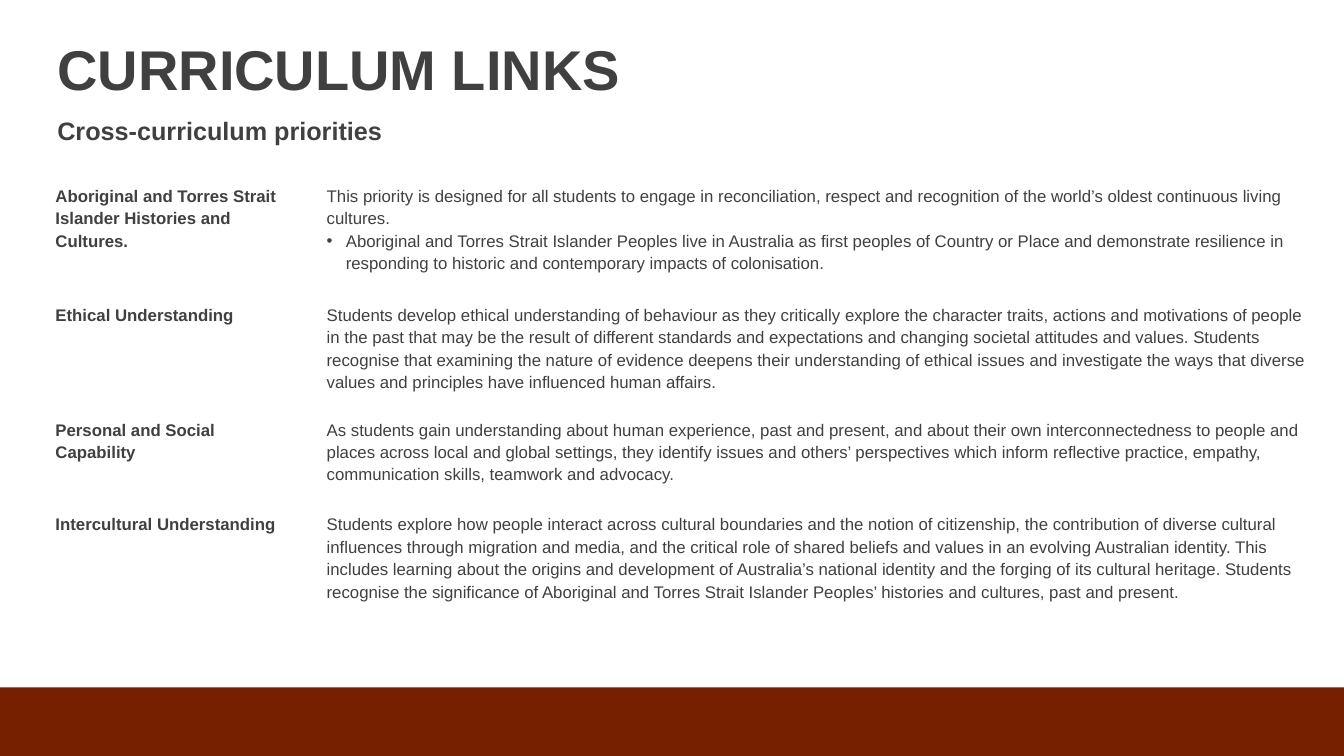
from lxml import etree
from pptx import Presentation
from pptx.dml.color import RGBColor
from pptx.enum.shapes import MSO_SHAPE
from pptx.enum.text import MSO_ANCHOR, MSO_AUTO_SIZE, PP_ALIGN
from pptx.oxml.ns import qn
from pptx.util import Inches, Pt

RECTANGLE = MSO_SHAPE.RECTANGLE
TOP, MIDDLE = MSO_ANCHOR.TOP, MSO_ANCHOR.MIDDLE
NO_AUTOFIT = MSO_AUTO_SIZE.NONE
LEFT_ALIGN = PP_ALIGN.LEFT

TITLE = "CURRICULUM LINKS"
SUBTITLE = "Cross-curriculum priorities"
# Each priority: name, description, bullet points, row height in inches
PRIORITIES = [
    ("Aboriginal and Torres Strait Islander Histories and Cultures.",
     "This priority is designed for all students to engage in reconciliation, respect and "
     "recognition of the world’s oldest continuous living cultures.",
     ["Aboriginal and Torres Strait Islander Peoples live in Australia as first peoples of "
      "Country or Place and demonstrate resilience in responding to historic and contemporary "
      "impacts of colonisation."], 1.18),
    ("Ethical Understanding",
     "Students develop ethical understanding of behaviour as they critically explore the "
     "character traits, actions and motivations of people in the past that may be the result "
     "of different standards and expectations and changing societal attitudes and values. "
     "Students recognise that examining the nature of evidence deepens their understanding of "
     "ethical issues and investigate the ways that diverse values and principles have "
     "influenced human affairs.", [], 1.14),
    ("Personal and Social Capability",
     "As students gain understanding about human experience, past and present, and about their "
     "own interconnectedness to people and places across local and global settings, they "
     "identify issues and others’ perspectives which inform reflective practice, empathy, "
     "communication skills, teamwork and advocacy.", [], 0.94),
    ("Intercultural Understanding",
     "Students explore how people interact across cultural boundaries and the notion of "
     "citizenship, the contribution of diverse cultural influences through migration and "
     "media, and the critical role of shared beliefs and values in an evolving Australian "
     "identity. This includes learning about the origins and development of Australia’s "
     "national identity and the forging of its cultural heritage. Students recognise the "
     "significance of Aboriginal and Torres Strait Islander Peoples’ histories and cultures, "
     "past and present.", [], 1.08),
]

THEME = {
    "font": "Arial",
    "text": RGBColor(0x40, 0x40, 0x40),
    "bar": RGBColor(0x76, 0x20, 0x00),
    "title": Pt(40),
    "subtitle": Pt(18),
    "body": Pt(12),
}
SLIDE_WIDTH, SLIDE_HEIGHT = 13.33, 7.5
BAR_HEIGHT = 0.68
LEFT = 0.47
TABLE_TOP = 1.74
COLUMN_WIDTHS = (2.5, 10.16)
CELL_MARGIN = 0.08
INDENT = 0.19
LINE_SPACING = 1.19
SPACE_AFTER = Pt(7.5)


def apply_format(target, values):
    for name, value in values.items():
        setattr(target, name, value)


def write_paragraph(paragraph, text, size, bold, line_spacing=LINE_SPACING, space_after=Pt(0)):
    paragraph.text = text
    apply_format(paragraph, {"alignment": LEFT_ALIGN, "line_spacing": line_spacing,
                             "space_before": Pt(0), "space_after": space_after})
    apply_format(paragraph.font, {"name": THEME["font"], "size": THEME[size], "bold": bold})
    paragraph.font.color.rgb = THEME["text"]


def indent_paragraph(paragraph, left, bullet=False):
    """Set the left indent in inches, with a hanging bullet if asked."""
    properties = paragraph._p.get_or_add_pPr()
    properties.set("marL", str(Inches(left)))
    properties.set("indent", str(Inches(-INDENT if bullet else 0)))
    if bullet:
        font = etree.SubElement(properties, qn("a:buFont"))
        font.set("typeface", THEME["font"])
        etree.SubElement(properties, qn("a:buChar")).set("char", "•")


def add_bar(slide):
    bar = slide.shapes.add_shape(RECTANGLE, 0, Inches(SLIDE_HEIGHT - BAR_HEIGHT),
                                 Inches(SLIDE_WIDTH), Inches(BAR_HEIGHT))
    bar.shadow.inherit = False
    bar.fill.solid()
    bar.fill.fore_color.rgb = THEME["bar"]
    bar.line.fill.background()


def add_headings(slide):
    title = slide.shapes.title
    apply_format(title, {"left": Inches(LEFT), "top": Inches(0.37),
                         "width": Inches(8.23), "height": Inches(0.62)})
    subtitle = slide.shapes.add_textbox(Inches(LEFT), Inches(1.04), Inches(5.07), Inches(0.43))
    for shape, anchor in ((title, MIDDLE), (subtitle, TOP)):
        apply_format(shape.text_frame, {"word_wrap": True, "auto_size": NO_AUTOFIT,
                                        "vertical_anchor": anchor})
    write_paragraph(title.text_frame.paragraphs[0], TITLE, "title", True, line_spacing=1.0)
    write_paragraph(subtitle.text_frame.paragraphs[0], SUBTITLE, "subtitle", True)


def fill_description(text_frame, description, bullets):
    texts = [description, *bullets]
    for index, text in enumerate(texts):
        paragraph = text_frame.add_paragraph() if index else text_frame.paragraphs[0]
        is_last = index == len(texts) - 1
        indent_paragraph(paragraph, INDENT * (2 if index else 1), bullet=index > 0)
        write_paragraph(paragraph, text, "body", False,
                        space_after=SPACE_AFTER if is_last else Pt(0))


def add_priorities_table(slide):
    height = sum(priority[-1] for priority in PRIORITIES)
    table = slide.shapes.add_table(len(PRIORITIES), len(COLUMN_WIDTHS), Inches(LEFT),
                                   Inches(TABLE_TOP), Inches(sum(COLUMN_WIDTHS)),
                                   Inches(height)).table
    apply_format(table, {"first_row": False, "horz_banding": False})
    for column, width in zip(table.columns, COLUMN_WIDTHS):
        column.width = Inches(width)
    margins = {f"margin_{side}": Inches(CELL_MARGIN)
               for side in ("left", "top", "right", "bottom")}
    for row, (name, description, bullets, row_height) in zip(table.rows, PRIORITIES):
        row.height = Inches(row_height)
        name_cell, description_cell = row.cells
        for cell in (name_cell, description_cell):
            apply_format(cell, {**margins, "vertical_anchor": TOP})
            cell.fill.background()
        write_paragraph(name_cell.text_frame.paragraphs[0], name, "body", True)
        fill_description(description_cell.text_frame, description, bullets)


def main():
    presentation = Presentation()
    presentation.slide_width = Inches(SLIDE_WIDTH)
    presentation.slide_height = Inches(SLIDE_HEIGHT)
    title_only = presentation.slide_layouts.get_by_name("Title Only")
    slide = presentation.slides.add_slide(title_only)
    add_bar(slide)
    add_headings(slide)
    add_priorities_table(slide)
    presentation.save("out.pptx")


if __name__ == "__main__":
    main()
